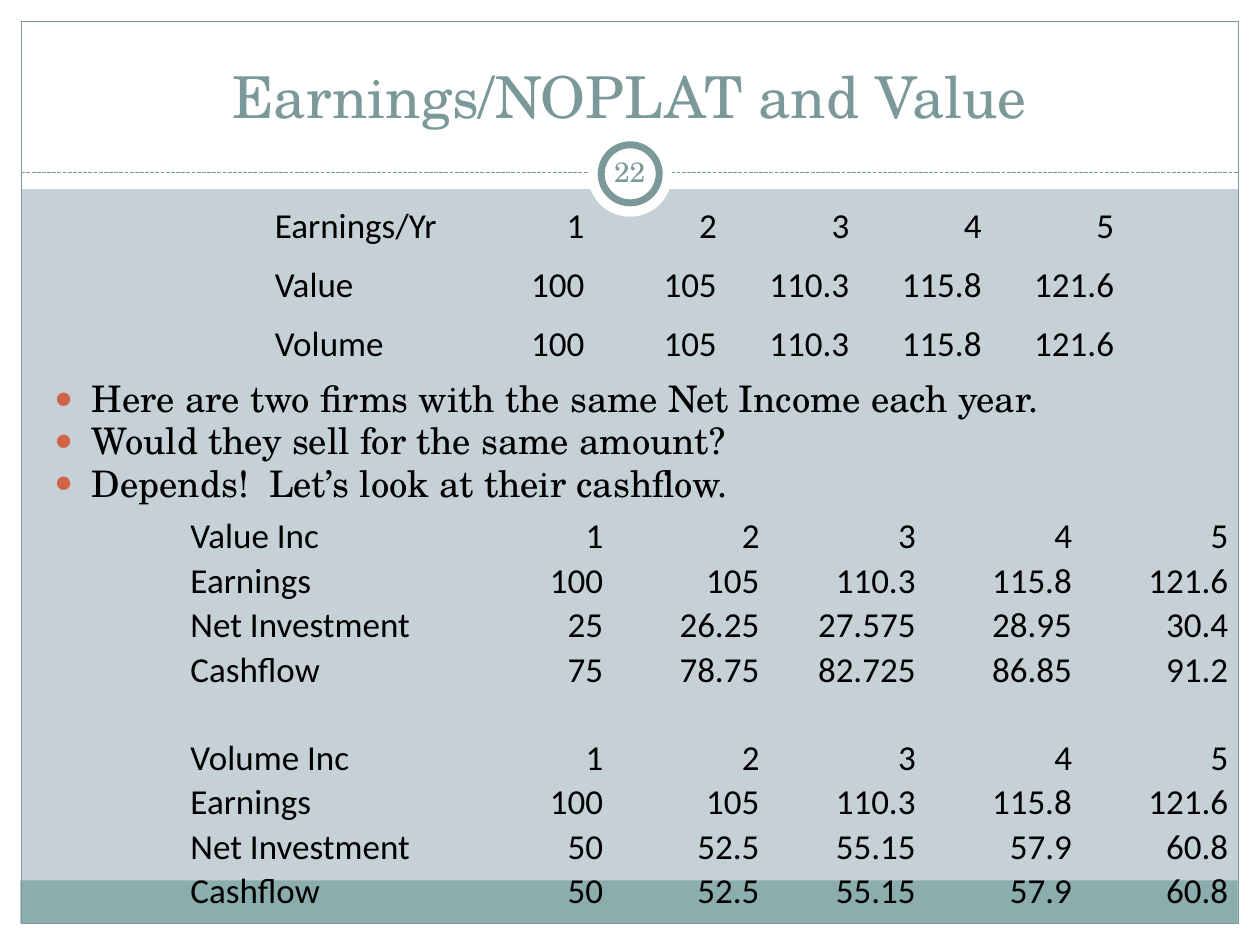
import dataclasses
import typing

import lxml.etree
import pptx
import pptx.dml.color
import pptx.enum.dml
import pptx.enum.shapes
import pptx.enum.text
import pptx.oxml.ns
import pptx.util

Cm = pptx.util.Cm
Pt = pptx.util.Pt
ALIGN = pptx.enum.text.PP_ALIGN
ANCHOR = pptx.enum.text.MSO_ANCHOR
SHAPE = pptx.enum.shapes.MSO_SHAPE
qn = pptx.oxml.ns.qn


@dataclasses.dataclass(frozen=True)
class Theme:
    background: str = "C5D1D7"
    paper: str = "FFFFFF"
    accent: str = "7C999A"
    footer: str = "8CADAE"
    bullet: str = "D16349"
    ink: str = "000000"
    serif: str = "TeX Gyre Schola"
    sans: str = "Calibri"
    title_size: float = 33
    body_size: float = 20.9
    table_size: float = 20
    number_size: float = 16
    no_grid: str = "{2D5ABB26-0587-4C30-8999-92F81FD0307C}"


class Box(typing.NamedTuple):
    """Left, top, width and height in centimetres."""
    left: float
    top: float
    width: float
    height: float

    def lengths(self) -> list[pptx.util.Length]:
        return [Cm(value) for value in self]


class Panel(typing.NamedTuple):
    box: Box
    fill: str | None
    line: str | None = None
    weight: float = 0.75
    outline: SHAPE = SHAPE.RECTANGLE


class Figures(typing.NamedTuple):
    """A table with one label column and equal number columns."""
    left: float
    top: float
    label_width: float
    number_width: float
    row_height: float
    rows: list[list[str]]


THEME = Theme()
WIDTH, HEIGHT = 25.4, 19.05
EDGE = 0.43
RULE_TOP = 3.48

YEARS = ["1", "2", "3", "4", "5"]
EARNINGS = ["100", "105", "110.3", "115.8", "121.6"]

PANELS = [
    # White margins, footer band and frame
    Panel(Box(0, HEIGHT - EDGE, WIDTH, EDGE), THEME.paper),
    Panel(Box(0, 0, WIDTH, 3.81), THEME.paper),
    Panel(Box(0, 0, EDGE, HEIGHT), THEME.paper),
    Panel(Box(WIDTH - EDGE, 0, EDGE, HEIGHT), THEME.paper),
    Panel(Box(0.41, 17.75, 24.54, 0.87), THEME.footer),
    Panel(Box(EDGE, EDGE, WIDTH - 2 * EDGE, HEIGHT - 2 * EDGE), None, THEME.accent),
]
BADGE = [
    Panel(Box(11.85, 2.67, 1.7, 1.7), THEME.paper, outline=SHAPE.OVAL),
    Panel(Box(12.12, 2.92, 1.17, 1.17), THEME.paper, THEME.accent, 4, SHAPE.OVAL),
]

QUESTIONS = [
    "Here are two firms with the same Net Income each year.",
    "Would they sell for the same amount?",
    "Depends!  Let’s look at their cashflow.",
]

EARNINGS_BY_FIRM = Figures(5.51, 3.81, 3.63, 2.67, 1.19, [
    ["Earnings/Yr", *YEARS],
    ["Value", *EARNINGS],
    ["Volume", *EARNINGS],
])
CASHFLOW_BY_FIRM = Figures(3.81, 10.36, 5.23, 3.15, 0.89, [
    ["Value Inc", *YEARS],
    ["Earnings", *EARNINGS],
    ["Net Investment", "25", "26.25", "27.575", "28.95", "30.4"],
    ["Cashflow", "75", "78.75", "82.725", "86.85", "91.2"],
    [""] * 6,
    ["Volume Inc", *YEARS],
    ["Earnings", *EARNINGS],
    ["Net Investment", "50", "52.5", "55.15", "57.9", "60.8"],
    ["Cashflow", "50", "52.5", "55.15", "57.9", "60.8"],
])


def rgb(code: str) -> pptx.dml.color.RGBColor:
    return pptx.dml.color.RGBColor.from_string(code)


def style(paragraph, face: str, size: float, color: str, align: ALIGN) -> None:
    paragraph.alignment = align
    for run in paragraph.runs:
        run.font.name = face
        run.font.size = Pt(size)
        run.font.color.rgb = rgb(color)


def place(holder, box: Box, anchor: ANCHOR) -> None:
    """Move a placeholder to its box and in front of what is already drawn."""
    holder.left, holder.top, holder.width, holder.height = box.lengths()
    holder.text_frame.auto_size = pptx.enum.text.MSO_AUTO_SIZE.NONE
    holder.text_frame.vertical_anchor = anchor
    holder.element.getparent().append(holder.element)


def draw_panel(slide, panel: Panel) -> None:
    shape = slide.shapes.add_shape(panel.outline, *panel.box.lengths())
    shape.shadow.inherit = False
    if panel.fill:
        shape.fill.solid()
        shape.fill.fore_color.rgb = rgb(panel.fill)
    else:
        shape.fill.background()
    if panel.line:
        shape.line.color.rgb = rgb(panel.line)
        shape.line.width = Pt(panel.weight)
    else:
        shape.line.fill.background()


def draw_rule(slide) -> None:
    rule = slide.shapes.add_connector(
        pptx.enum.shapes.MSO_CONNECTOR.STRAIGHT,
        Cm(EDGE), Cm(RULE_TOP), Cm(WIDTH - EDGE), Cm(RULE_TOP))
    rule.line.color.rgb = rgb(THEME.accent)
    rule.line.width = Pt(0.75)
    rule.line.dash_style = pptx.enum.dml.MSO_LINE.SQUARE_DOT
    lxml.etree.SubElement(rule.element.spPr, qn("a:effectLst"))


def draw_number(slide, number: str) -> None:
    frame = slide.shapes.add_textbox(*Box(12.06, 2.84, 1.27, 1.22).lengths()).text_frame
    frame.word_wrap = True
    frame.vertical_anchor = ANCHOR.MIDDLE
    frame.margin_left = frame.margin_right = Cm(0.13)
    frame.text = number
    style(frame.paragraphs[0], THEME.serif, THEME.number_size, THEME.accent, ALIGN.CENTER)


def add_bullet(paragraph) -> None:
    properties = paragraph._p.get_or_add_pPr()
    properties.set("marL", str(Cm(0.76)))
    properties.set("indent", str(Cm(-0.76)))
    color = lxml.etree.SubElement(properties, qn("a:buClr"))
    lxml.etree.SubElement(color, qn("a:srgbClr"), val=THEME.bullet)
    lxml.etree.SubElement(properties, qn("a:buSzPct"), val="85000")
    lxml.etree.SubElement(properties, qn("a:buChar"), char="●")


def fill_questions(body) -> None:
    body.text_frame.text = "\n".join(QUESTIONS)
    for paragraph in body.text_frame.paragraphs:
        style(paragraph, THEME.serif, THEME.body_size, THEME.ink, ALIGN.LEFT)
        paragraph.line_spacing = 0.8
        paragraph.space_before = Pt(4.2)
        add_bullet(paragraph)


def draw_figures(slide, figures: Figures) -> None:
    row_count, column_count = len(figures.rows), len(figures.rows[0])
    box = Box(figures.left, figures.top,
              figures.label_width + (column_count - 1) * figures.number_width,
              row_count * figures.row_height)
    frame = slide.shapes.add_table(row_count, column_count, *box.lengths())
    table = frame.table
    table.first_row = table.horz_banding = False
    next(frame.element.iter(qn("a:tableStyleId"))).text = THEME.no_grid
    for index, column in enumerate(table.columns):
        column.width = Cm(figures.number_width if index else figures.label_width)
    for row, values in zip(table.rows, figures.rows):
        row.height = Cm(figures.row_height)
        for index, (cell, value) in enumerate(zip(row.cells, values)):
            cell.fill.background()
            cell.vertical_anchor = ANCHOR.BOTTOM
            cell.margin_left = cell.margin_right = cell.margin_top = Cm(0.03)
            cell.margin_bottom = 0
            cell.text_frame.text = value
            style(cell.text_frame.paragraphs[0], THEME.sans, THEME.table_size,
                  THEME.ink, ALIGN.RIGHT if index else ALIGN.LEFT)


def main() -> None:
    deck = pptx.Presentation()
    deck.slide_width, deck.slide_height = Cm(WIDTH), Cm(HEIGHT)
    slide = deck.slides.add_slide(deck.slide_layouts[1])
    title, body = slide.shapes.title, slide.placeholders[1]
    slide.background.fill.solid()
    slide.background.fill.fore_color.rgb = rgb(THEME.background)

    # Frame, rule and number badge
    for panel in PANELS:
        draw_panel(slide, panel)
    draw_rule(slide)
    for panel in BADGE:
        draw_panel(slide, panel)

    # Title and slide number
    place(title, Box(0.84, 0.64, 23.7, 2.11), ANCHOR.BOTTOM)
    title.text_frame.text = "Earnings/NOPLAT and Value"
    style(title.text_frame.paragraphs[0], THEME.serif, THEME.title_size,
          THEME.accent, ALIGN.CENTER)
    draw_number(slide, "22")

    # Tables with the questions between them
    draw_figures(slide, EARNINGS_BY_FIRM)
    place(body, Box(0.84, 7.62, 23.62, 2.97), ANCHOR.TOP)
    fill_questions(body)
    draw_figures(slide, CASHFLOW_BY_FIRM)

    deck.save("out.pptx")


if __name__ == "__main__":
    main()
